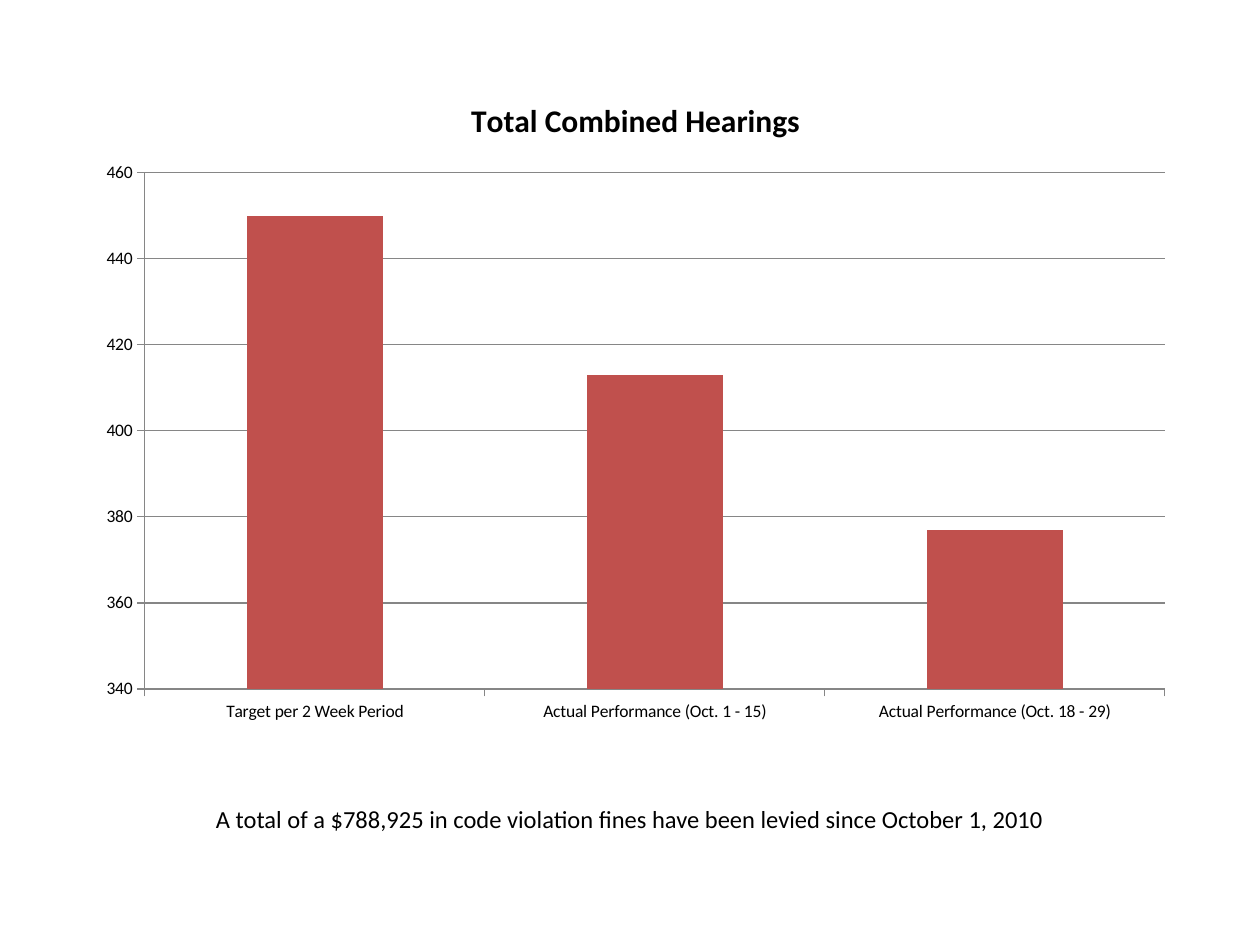
import pptx
import pptx.util
import pptx.dml.color
import pptx.chart.data
import pptx.enum.chart
import pptx.enum.text

# Content
TITLE = "Total Combined Hearings"
BARS = [
    ("Target per 2 Week Period", 450),
    ("Actual Performance (Oct. 1 - 15)", 413),
    ("Actual Performance (Oct. 18 - 29)", 377),
]
NOTE = "A total of a $788,925 in code violation fines have been levied since October 1, 2010"
FONT, BLACK, RED, GRAY = "Calibri", "000000", "C0504D", "868686"
LOW, HIGH, STEP = 340, 460, 20

# Slide, with places as shares of its size
WIDE, HIGH_IN = 10, 7.5
CHART = (0.067, 0.077, 0.875, 0.7)
FOOT = (0.125, 0.844, 0.75, 0.045)


def color(code):
    return pptx.dml.color.RGBColor.from_string(code)


def place(box):
    sides = (WIDE, HIGH_IN, WIDE, HIGH_IN)
    return [pptx.util.Inches(part * side) for part, side in zip(box, sides)]


def style(font, size, bold=False):
    font.name, font.size, font.bold = FONT, pptx.util.Pt(size), bold
    font.color.rgb = color(BLACK)


def rule(line):
    line.color.rgb = color(GRAY)
    line.width = pptx.util.Pt(0.75)


deck = pptx.Presentation()
deck.slide_width = pptx.util.Inches(WIDE)
deck.slide_height = pptx.util.Inches(HIGH_IN)
slide = deck.slides.add_slide(deck.slide_layouts[6])

# Column chart
data = pptx.chart.data.CategoryChartData()
data.categories = [name for name, count in BARS]
data.add_series(TITLE, [count for name, count in BARS])
kind = pptx.enum.chart.XL_CHART_TYPE.COLUMN_CLUSTERED
chart = slide.shapes.add_chart(kind, *place(CHART), data).chart
style(chart.font, 10)
chart.has_legend = False
chart.has_title = True
head = chart.chart_title.text_frame
head.text = TITLE
style(head.paragraphs[0].runs[0].font, 18, True)

# Bars
plot = chart.plots[0]
plot.vary_by_categories = False
plot.gap_width = 150
bars = plot.series[0]
bars.format.fill.solid()
bars.format.fill.fore_color.rgb = color(RED)

# Axes
for axis in (chart.category_axis, chart.value_axis):
    axis.major_tick_mark = pptx.enum.chart.XL_TICK_MARK.OUTSIDE
    axis.minor_tick_mark = pptx.enum.chart.XL_TICK_MARK.NONE
    rule(axis.format.line)
scale = chart.value_axis
scale.minimum_scale, scale.maximum_scale, scale.major_unit = LOW, HIGH, STEP
scale.has_major_gridlines = True
rule(scale.major_gridlines.format.line)

# Note below the chart
frame = slide.shapes.add_textbox(*place(FOOT)).text_frame
frame.word_wrap = True
frame.auto_size = pptx.enum.text.MSO_AUTO_SIZE.SHAPE_TO_FIT_TEXT
frame.text = NOTE
line = frame.paragraphs[0]
line.alignment = pptx.enum.text.PP_ALIGN.CENTER
style(line.runs[0].font, 14)

deck.save("out.pptx")
